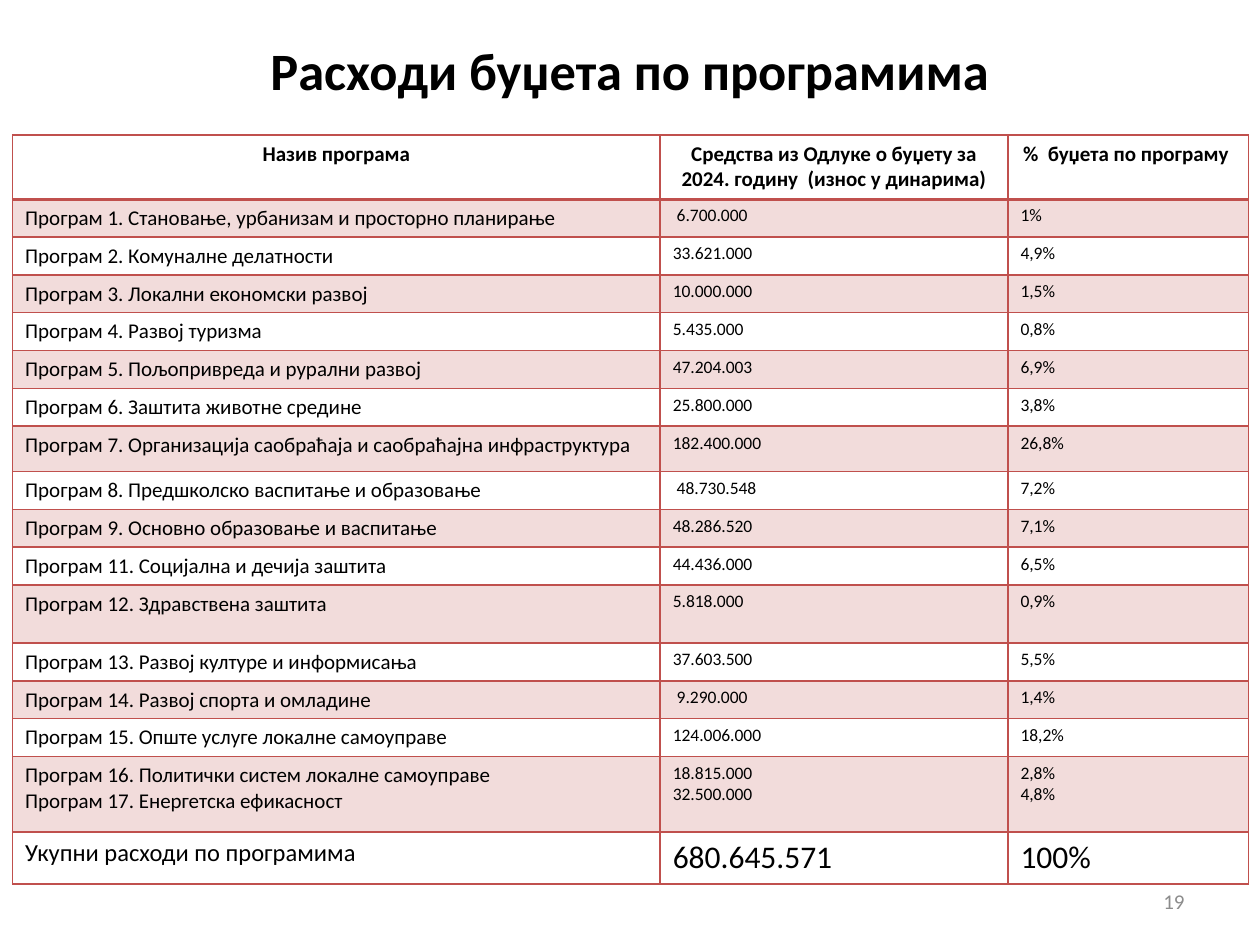
from lxml.etree import SubElement
from pptx import Presentation
from pptx.dml.color import RGBColor
from pptx.enum.text import MSO_ANCHOR, PP_ALIGN
from pptx.oxml.ns import qn
from pptx.util import Inches, Pt

RED, PINK, BLACK, GREY = "C0504D", "F2DCDB", "000000", "8C8C8C"
HEADER = ["Назив програма",
          "Средства из Одлуке о буџету за 2024. годину  (износ у динарима)",
          "%  буџета по програму "]
PROGRAMS = [
    ("Програм 1. Становање, урбанизам и просторно планирање", " 6.700.000", "1%"),
    ("Програм 2. Комуналне делатности", "33.621.000", "4,9%"),
    ("Програм 3. Локални економски развој", "10.000.000", "1,5%"),
    ("Програм 4. Развој туризма", "5.435.000", "0,8%"),
    ("Програм 5. Пољопривреда и рурални развој", "47.204.003", "6,9%"),
    ("Програм 6. Заштита животне средине", "25.800.000", "3,8%"),
    ("Програм 7. Организација саобраћаја и саобраћајна инфраструктура",
     "182.400.000", "26,8%"),
    ("Програм 8. Предшколско васпитање и образовање", " 48.730.548", "7,2%"),
    ("Програм 9. Основно образовање и васпитање", "48.286.520", "7,1%"),
    ("Програм 11. Социјална и дечија заштита", "44.436.000", "6,5%"),
    ("Програм 12. Здравствена заштита", "5.818.000", "0,9%"),
    ("Програм 13. Развој културе и информисања", "37.603.500", "5,5%"),
    ("Програм 14. Развој спорта и омладине", " 9.290.000", "1,4%"),
    ("Програм 15. Опште услуге локалне самоуправе", "124.006.000", "18,2%"),
    ("Програм 16. Политички систем локалне самоуправе\nПрограм 17. Енергетска ефикасност",
     "18.815.000\n32.500.000", "2,8%\n4,8%"),
]
TOTAL = ("Укупни расходи по програмима", "680.645.571", "100%")
ROWS = [HEADER, *PROGRAMS, TOTAL]
LAST = len(ROWS) - 1
ROW_HEIGHTS = {0: 0.51, 7: 0.36, 11: 0.46, 15: 0.6, LAST: 0.41}


def write(tf, text, size, color=BLACK, bold=False, align=PP_ALIGN.LEFT):
    tf.text = text
    for p in tf.paragraphs:
        p.alignment = align
        for r in p.runs:
            font = {"name": "Calibri", "size": Pt(size), "bold": bold}
            for key, value in font.items():
                setattr(r.font, key, value)
            r.font.color.rgb = RGBColor.from_string(color)


def add_borders(cell, widths):
    """Draw the left, right, top and bottom lines; call before filling the cell."""
    tcPr = cell._tc.get_or_add_tcPr()
    for side, width in zip("LRTB", widths):
        ln = SubElement(tcPr, qn(f"a:ln{side}"), w=str(Pt(width)))
        fill = SubElement(ln, qn("a:solidFill"))
        SubElement(fill, qn("a:srgbClr"), val=RED)


prs = Presentation()
prs.slide_width, prs.slide_height = Inches(10), Inches(7.5)
s = prs.slides.add_slide(prs.slide_layouts[5])

title = s.shapes.title
title.left, title.top = Inches(0.74), Inches(0.13)
title.width, title.height = Inches(8.52), Inches(0.85)
title.text_frame.vertical_anchor = MSO_ANCHOR.MIDDLE
write(title.text_frame, "Расходи буџета по програмима", 30, bold=True, align=PP_ALIGN.CENTER)

number = s.shapes.add_textbox(Inches(7.17), Inches(6.95), Inches(2.33), Inches(0.4))
number.text_frame.word_wrap = True
number.text_frame.vertical_anchor = MSO_ANCHOR.MIDDLE
write(number.text_frame, "19", 12, GREY, align=PP_ALIGN.RIGHT)

table = s.shapes.add_table(len(ROWS), 3, Inches(0.1), Inches(1.07),
                           Inches(9.8), Inches(5.92)).table
table.first_row = table.horz_banding = False
for col, width in zip(table.columns, (5.14, 2.76, 1.91)):
    col.width = Inches(width)

for i, row in enumerate(ROWS):
    table.rows[i].height = Inches(ROW_HEIGHTS.get(i, 0.3))
    for j, text in enumerate(row):
        cell = table.cell(i, j)
        add_borders(cell, (1, 1, 2 if i == 1 else 1, 2 if i == 0 else 1))
        if i % 2 and i < LAST:
            cell.fill.solid()
            cell.fill.fore_color.rgb = RGBColor.from_string(PINK)
        else:
            cell.fill.background()
        if i == 0:
            write(cell.text_frame, text, 12, bold=True, align=PP_ALIGN.CENTER)
        elif i == LAST:
            write(cell.text_frame, text, 14 if j == 0 else 18)
        else:
            write(cell.text_frame, text, 12 if j == 0 else 10)

prs.save("out.pptx")
